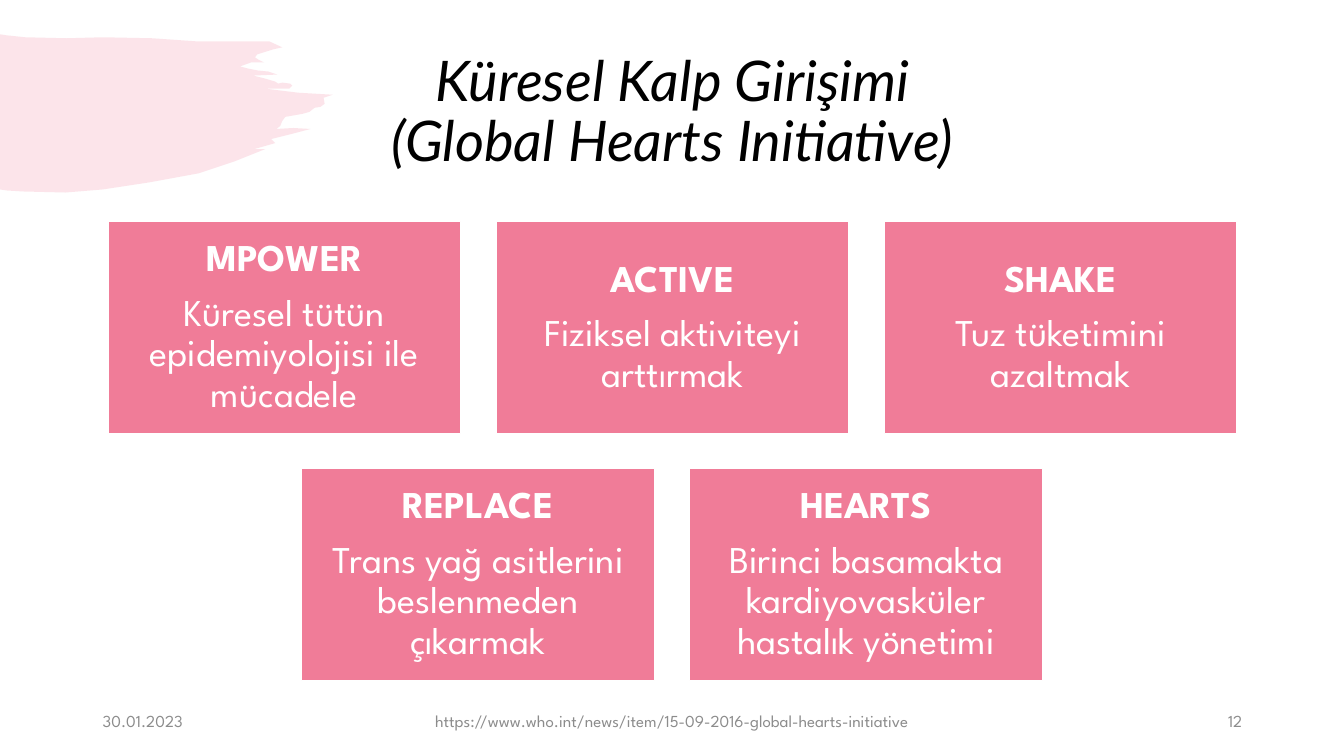
from lxml import etree
from pptx import Presentation
from pptx.dml.color import RGBColor
from pptx.enum.shapes import MSO_SHAPE
from pptx.enum.text import MSO_ANCHOR, PP_ALIGN
from pptx.oxml.ns import qn
from pptx.util import Pt

PX = 9144  # EMU per px, 100 px to the inch
COLORS = {"pink": "F07C98", "white": "FFFFFF", "black": "000000", "grey": "8C8C8C"}


def color(name):
    return RGBColor.from_string(COLORS[name])


def add_text(x, y, w, h, text, font, size, fill, align):
    tf = s.shapes.add_textbox(x * PX, y * PX, w * PX, h * PX).text_frame
    tf.word_wrap = True
    tf.vertical_anchor = MSO_ANCHOR.MIDDLE
    p = tf.paragraphs[0]
    p.text = text
    p.alignment = align
    p.font.name = font
    p.font.size = Pt(size)
    p.font.color.rgb = color(fill)
    return p


prs = Presentation()
prs.slide_width, prs.slide_height = 1333 * PX, 750 * PX
s = prs.slides.add_slide(prs.slide_layouts[6])

# Brush stroke: top edge, ragged right end, bottom edge
BRUSH = [
    (0, 34), (6, 35), (25, 37), (66, 38), (102, 37), (151, 38), (194, 41), (248, 41),
    (267, 41), (280, 47), (271, 49), (255, 54), (253, 57), (256, 59), (262, 62),
    (249, 62), (238, 66), (246, 68), (256, 70), (266, 71), (275, 74), (251, 75),
    (263, 78), (273, 81), (276, 83), (280, 82), (288, 83), (290, 85), (287, 88),
    (284, 88), (263, 88), (296, 92), (330, 94), (321, 97), (322, 103), (318, 106),
    (312, 107), (307, 111), (300, 113), (283, 116), (280, 120), (278, 125), (274, 128),
    (291, 127), (308, 128), (289, 133), (269, 138), (273, 142), (252, 148), (263, 148),
    (233, 160), (197, 172), (148, 181), (102, 188), (65, 191), (23, 190), (7, 189),
    (0, 188),
]
fb = s.shapes.build_freeform(*BRUSH[0], scale=PX)
fb.add_line_segments(BRUSH[1:], close=True)
brush = fb.convert_to_shape()
brush.shadow.inherit = False
brush.fill.solid()
brush.fill.fore_color.rgb = color("pink")
brush.line.fill.background()
srgb = brush.fill._xPr.find(qn("a:solidFill")).find(qn("a:srgbClr"))
etree.SubElement(srgb, qn("a:alpha")).set("val", "20000")

# Title
p = add_text(92, 40, 1150, 145, "Küresel Kalp Girişimi\v(Global Hearts Initiative)",
             "Lato", 40, "black", PP_ALIGN.CENTER)
p.font.italic = True
p.line_spacing = 0.9

# Cards: each row is (left, top, cards)
CARD_W, CARD_H, GAP = 350, 210, 35
ROWS = [
    (107, 220, [
        ("MPOWER", "Küresel tütün epidemiyolojisi ile mücadele"),
        ("ACTIVE", "Fiziksel aktiviteyi arttırmak"),
        ("SHAKE", "Tuz tüketimini azaltmak"),
    ]),
    (299, 465, [
        ("REPLACE", "Trans yağ asitlerini beslenmeden çıkarmak"),
        ("HEARTS", "Birinci basamakta kardiyovasküler hastalık yönetimi"),
    ]),
]
for left, top, cards in ROWS:
    for i, texts in enumerate(cards):
        x = left + i * (CARD_W + GAP)
        sp = s.shapes.add_shape(MSO_SHAPE.RECTANGLE, x * PX, top * PX,
                                CARD_W * PX, CARD_H * PX)
        sp.shadow.inherit = False
        sp.fill.solid()
        sp.fill.fore_color.rgb = color("pink")
        sp.line.color.rgb = color("white")
        sp.line.width = Pt(1)
        tf = sp.text_frame
        tf.word_wrap = True
        tf.vertical_anchor = MSO_ANCHOR.MIDDLE
        tf.margin_left = tf.margin_right = tf.margin_top = tf.margin_bottom = 11 * PX
        tf.text = "\n".join(texts)
        for p, bold in zip(tf.paragraphs, (True, False)):
            p.alignment = PP_ALIGN.CENTER
            p.line_spacing = 0.9
            p.space_after = Pt(9.5)
            p.font.name = "League Spartan"
            p.font.size = Pt(27)
            p.font.bold = bold
            p.font.color.rgb = color("white")

# Footer: date, source address, slide number
for x, w, text, align in [
    (92, 300, "30.01.2023", PP_ALIGN.LEFT),
    (229, 875, "https://www.who.int/news/item/15-09-2016-global-hearts-initiative",
     PP_ALIGN.CENTER),
    (942, 300, "12", PP_ALIGN.RIGHT),
]:
    add_text(x, 695, w, 40, text, "League Spartan", 12, "grey", align)

prs.save("out.pptx")
